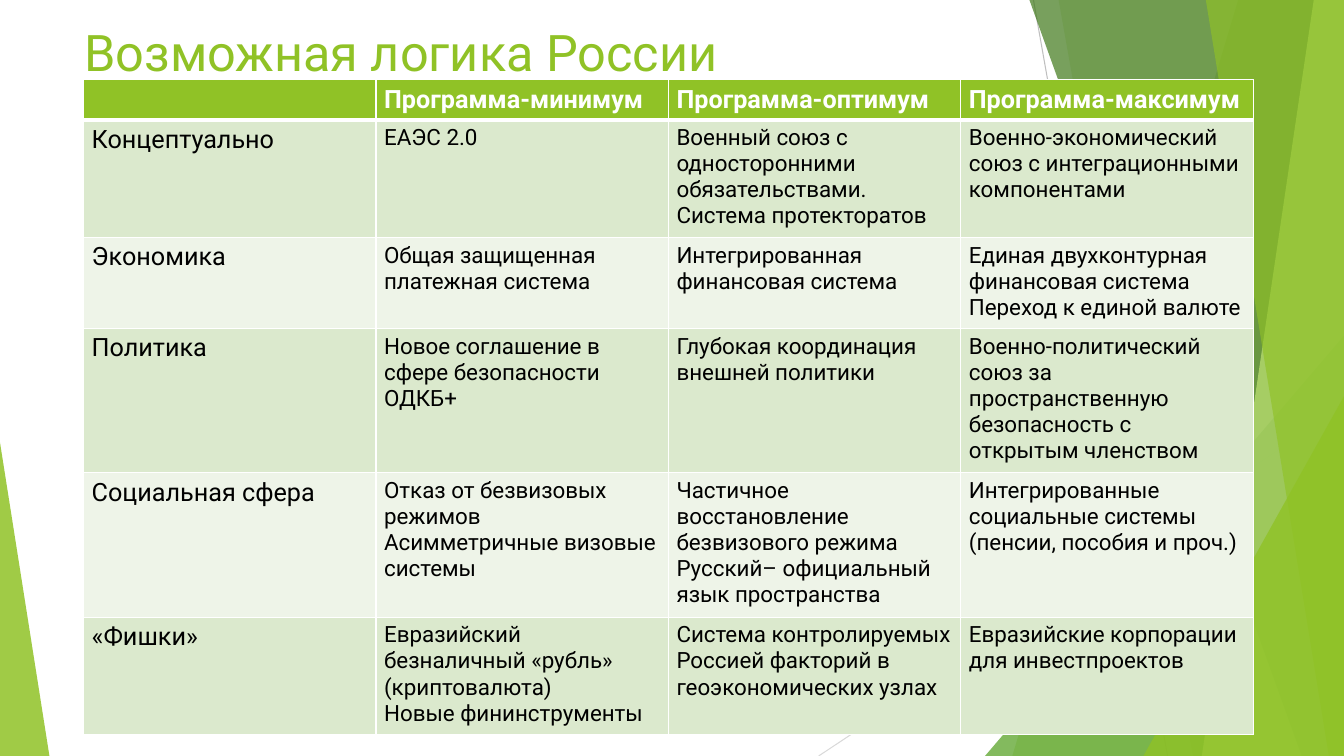
from lxml import etree
from pptx import Presentation, util as u
from pptx.dml.color import RGBColor
from pptx.enum import shapes, text
from pptx.oxml.ns import qn

PX = 9144  # EMU per px, 100 px to the inch
W, H = 1333, 750
FONT = "Roboto"
COLORS = {
    "white": "FFFFFF", "black": "000000", "green": "90C226", "leaf": "54A021",
    "forest": "3F7819", "lime": "C0E474", "band": "DBE9CD", "pale": "EEF4E8",
    "gray": "BFBFBF", "silver": "D9D9D9",
}

# Start, end, colour
LINES = [((1025, 0), (1158, H), "gray"), ((W, 403), (812, H), "silver")]
# Left edge at top, left edge at bottom, colour, opacity; all reach the right edge
BEAMS = [
    (1228, 1004, "green", 30), (1050, 1183, "green", 20),
    (1021, 1291, "forest", 70), (1303, 1192, "lime", 70),
    (1196, 1318, "green", 65),
]
# Left, top, width, apex position, colour, opacity; all stand on the bottom edge
TRIANGLES = [
    (977, 333, 356, 1, "leaf", 72), (1134, 393, 199, 1, "green", 80),
    (0, 439, 49, 0, "green", 85),
]

ROW_HEIGHTS = [39, 113, 87, 139, 139, 113]
COL_WIDTH = 290
ROWS = [
    ["", "Программа-минимум", "Программа-оптимум", "Программа-максимум"],
    ["Концептуально", "ЕАЭС 2.0",
     "Военный союз с односторонними обязательствами. Система протекторатов",
     "Военно-экономический союз с интеграционными компонентами"],
    ["Экономика", "Общая защищенная платежная система",
     "Интегрированная финансовая система",
     "Единая двухконтурная финансовая система\nПереход к единой валюте"],
    ["Политика", "Новое соглашение в сфере безопасности\nОДКБ+",
     "Глубокая координация\nвнешней политики",
     "Военно-политический союз за пространственную безопасность с открытым членством"],
    ["Социальная сфера",
     "Отказ от безвизовых режимов\nАсимметричные визовые системы",
     "Частичное восстановление безвизового режима\n"
     "Русский– официальный язык пространства",
     "Интегрированные социальные системы (пенсии, пособия и проч.)"],
    ["«Фишки»",
     "Евразийский безналичный «рубль»\n(криптовалюта)\nНовые фининструменты",
     "Система контролируемых Россией факторий в геоэкономических узлах",
     "Евразийские корпорации для инвестпроектов"],
]


def px(*values):
    return [u.Emu(v * PX) for v in values]


def rgb(name):
    return RGBColor.from_string(COLORS[name])


def set_attrs(obj, attrs):
    for name, value in attrs.items():
        setattr(obj, name, value)


def write(tf, content, size, color, bold=False):
    tf.text = content
    for p in tf.paragraphs:
        set_attrs(p.font, {"name": FONT, "size": u.Pt(size), "bold": bold})
        p.font.color.rgb = rgb(color)


def paint(sp, color, opacity):
    """Fill with a translucent colour, without outline or shadow."""
    sp.shadow.inherit = False
    sp.line.fill.background()
    sp.fill.solid()
    sp.fill.fore_color.rgb = rgb(color)
    clr = sp.fill._xPr.find(".//" + qn("a:srgbClr"))
    etree.SubElement(clr, qn("a:alpha"), val=str(opacity * 1000))


def add_line(s, start, end, color):
    c = s.shapes.add_connector(shapes.MSO_CONNECTOR.STRAIGHT, *px(*start, *end))
    c.line.color.rgb = rgb(color)
    c.line.width = u.Pt(0.75)
    etree.SubElement(c._element.spPr, qn("a:effectLst"))


def add_beam(s, top_x, bottom_x, color, opacity):
    fb = s.shapes.build_freeform(top_x, 0, scale=PX)
    fb.add_line_segments([(W, 0), (W, H), (bottom_x, H)], close=True)
    paint(fb.convert_to_shape(), color, opacity)


def add_triangle(s, left, top, width, apex, color, opacity):
    sp = s.shapes.add_shape(shapes.MSO_SHAPE.ISOSCELES_TRIANGLE,
                            *px(left, top, width, H - top))
    sp.adjustments[0] = apex
    paint(sp, color, opacity)


def add_title(s, content):
    tf = s.shapes.add_textbox(*px(74, 14, 940, 72)).text_frame
    set_attrs(tf, {"word_wrap": True, "vertical_anchor": text.MSO_ANCHOR.BOTTOM})
    write(tf, content, 36, "green")


def set_borders(cell, widths):
    """Draw white borders; widths maps L, R, T, B to points."""
    tcPr = cell._tc.get_or_add_tcPr()
    for i, side in enumerate("LRTB"):
        ln = etree.Element(qn("a:ln" + side), w=str(u.Pt(widths[side])))
        fill = etree.SubElement(ln, qn("a:solidFill"))
        etree.SubElement(fill, qn("a:srgbClr"), val=COLORS["white"])
        tcPr.insert(i, ln)


def fill_cell(cell, r, c, content):
    header = r == 0
    x, y = px(8, 5)
    set_attrs(cell, {"margin_left": x, "margin_right": x,
                     "margin_top": y, "margin_bottom": y})
    write(cell.text_frame, content, 18 if header or c == 0 else 16,
          "white" if header else "black", header)
    cell.fill.solid()
    cell.fill.fore_color.rgb = rgb("green" if header else "band" if r % 2 else "pale")
    set_borders(cell, {"L": 1, "R": 1, "T": 3 if r == 1 else 1, "B": 3 if header else 1})


def add_grid(s, rows):
    cols = len(rows[0])
    box = px(83, 79, COL_WIDTH * cols, sum(ROW_HEIGHTS))
    tbl = s.shapes.add_table(len(rows), cols, *box).table
    for col in tbl.columns:
        col.width = px(COL_WIDTH)[0]
    for r, (height, contents) in enumerate(zip(ROW_HEIGHTS, rows)):
        tbl.rows[r].height = px(height)[0]
        for c, content in enumerate(contents):
            fill_cell(tbl.cell(r, c), r, c, content)


def main():
    prs = Presentation()
    prs.slide_width, prs.slide_height = px(W, H)
    s = prs.slides.add_slide(prs.slide_layouts[6])
    for line in LINES:
        add_line(s, *line)
    for beam in BEAMS[:2]:
        add_beam(s, *beam)
    add_triangle(s, *TRIANGLES[0])
    for beam in BEAMS[2:]:
        add_beam(s, *beam)
    for triangle in TRIANGLES[1:]:
        add_triangle(s, *triangle)
    add_title(s, "Возможная логика России")
    add_grid(s, ROWS)
    prs.save("out.pptx")


if __name__ == "__main__":
    main()
